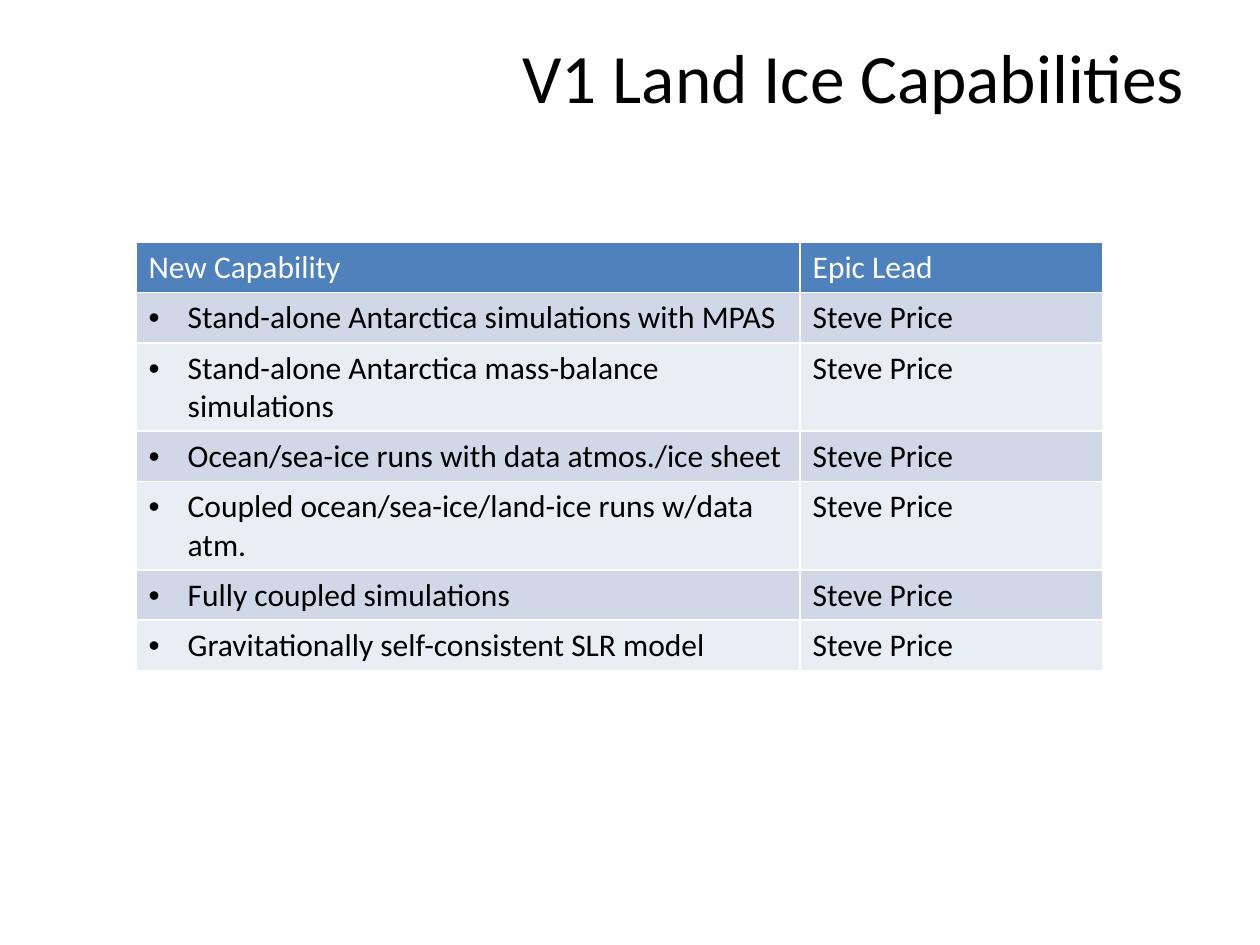
from dataclasses import dataclass

from lxml import etree
from pptx import Presentation
from pptx.dml.color import RGBColor
from pptx.enum.text import MSO_ANCHOR, PP_ALIGN
from pptx.oxml.ns import qn
from pptx.util import Inches, Pt

MIDDLE = MSO_ANCHOR.MIDDLE
LEFT, RIGHT = PP_ALIGN.LEFT, PP_ALIGN.RIGHT


@dataclass(frozen=True)
class Theme:
    """Colours, font and type sizes of the slide."""
    font: str = "Calibri"
    title_size: float = 39.6
    table_size: float = 18
    ink: str = "000000"
    header_ink: str = "FFFFFF"
    header_fill: str = "4F81BD"
    band_fills: tuple = ("D0D8E8", "E9EDF4")


THEME = Theme()
HEADINGS = ("New Capability", "Epic Lead")
LEAD = "Steve Price"
CAPABILITIES = (
    "Stand-alone Antarctica simulations with MPAS",
    "Stand-alone Antarctica mass-balance simulations",
    "Ocean/sea-ice runs with data atmos./ice sheet",
    "Coupled ocean/sea-ice/land-ice runs w/data atm.",
    "Fully coupled simulations",
    "Gravitationally self-consistent SLR model",
)
COLUMN_WIDTHS = (5.27, 2.4)
ROW_HEIGHT = 0.38
BULLET_INDENT = 0.31


def add_bullet(paragraph):
    """Give the paragraph a hanging round bullet."""
    properties = paragraph._p.get_or_add_pPr()
    properties.set("marL", str(Inches(BULLET_INDENT)))
    properties.set("indent", str(-Inches(BULLET_INDENT)))
    etree.SubElement(properties, qn("a:buFont"), typeface="Arial")
    etree.SubElement(properties, qn("a:buChar"), char="•")


def write_text(frame, text, size=THEME.table_size, color=THEME.ink,
               align=LEFT, bullet=False):
    """Write one formatted paragraph into a text frame."""
    paragraph = frame.paragraphs[0]
    paragraph.alignment = align
    if bullet:
        add_bullet(paragraph)
    run = paragraph.add_run()
    run.text = text
    run.font.name = THEME.font
    run.font.size = Pt(size)
    run.font.bold = False
    run.font.color.rgb = RGBColor.from_string(color)


def add_title(slide, text):
    """Add the right-aligned slide title."""
    title = slide.shapes.add_textbox(Inches(0.5), Inches(0.3), Inches(9), Inches(0.6))
    frame = title.text_frame
    frame.word_wrap = True
    frame.vertical_anchor = MIDDLE
    write_text(frame, text, size=THEME.title_size, align=RIGHT)


def fill_cell(cell, text, fill, **text_format):
    """Colour a table cell and write its text."""
    cell.fill.solid()
    cell.fill.fore_color.rgb = RGBColor.from_string(fill)
    write_text(cell.text_frame, text, **text_format)


def add_capability_table(slide):
    """Add the table of capabilities and their leads."""
    row_count = len(CAPABILITIES) + 1
    table = slide.shapes.add_table(
        row_count, len(HEADINGS), Inches(1.08), Inches(1.92),
        Inches(sum(COLUMN_WIDTHS)), Inches(ROW_HEIGHT * row_count)).table
    for column, width in zip(table.columns, COLUMN_WIDTHS):
        column.width = Inches(width)
    for row in table.rows:
        row.height = Inches(ROW_HEIGHT)
    for index, heading in enumerate(HEADINGS):
        fill_cell(table.cell(0, index), heading, THEME.header_fill,
                  color=THEME.header_ink)
    for index, capability in enumerate(CAPABILITIES):
        band = THEME.band_fills[index % len(THEME.band_fills)]
        fill_cell(table.cell(index + 1, 0), capability, band, bullet=True)
        fill_cell(table.cell(index + 1, 1), LEAD, band)


def main():
    """Build and save the slide."""
    deck = Presentation()
    deck.slide_width, deck.slide_height = Inches(10), Inches(7.5)
    slide = deck.slides.add_slide(deck.slide_layouts[6])
    add_title(slide, "V1 Land Ice Capabilities")
    add_capability_table(slide)
    deck.save("out.pptx")


if __name__ == "__main__":
    main()
